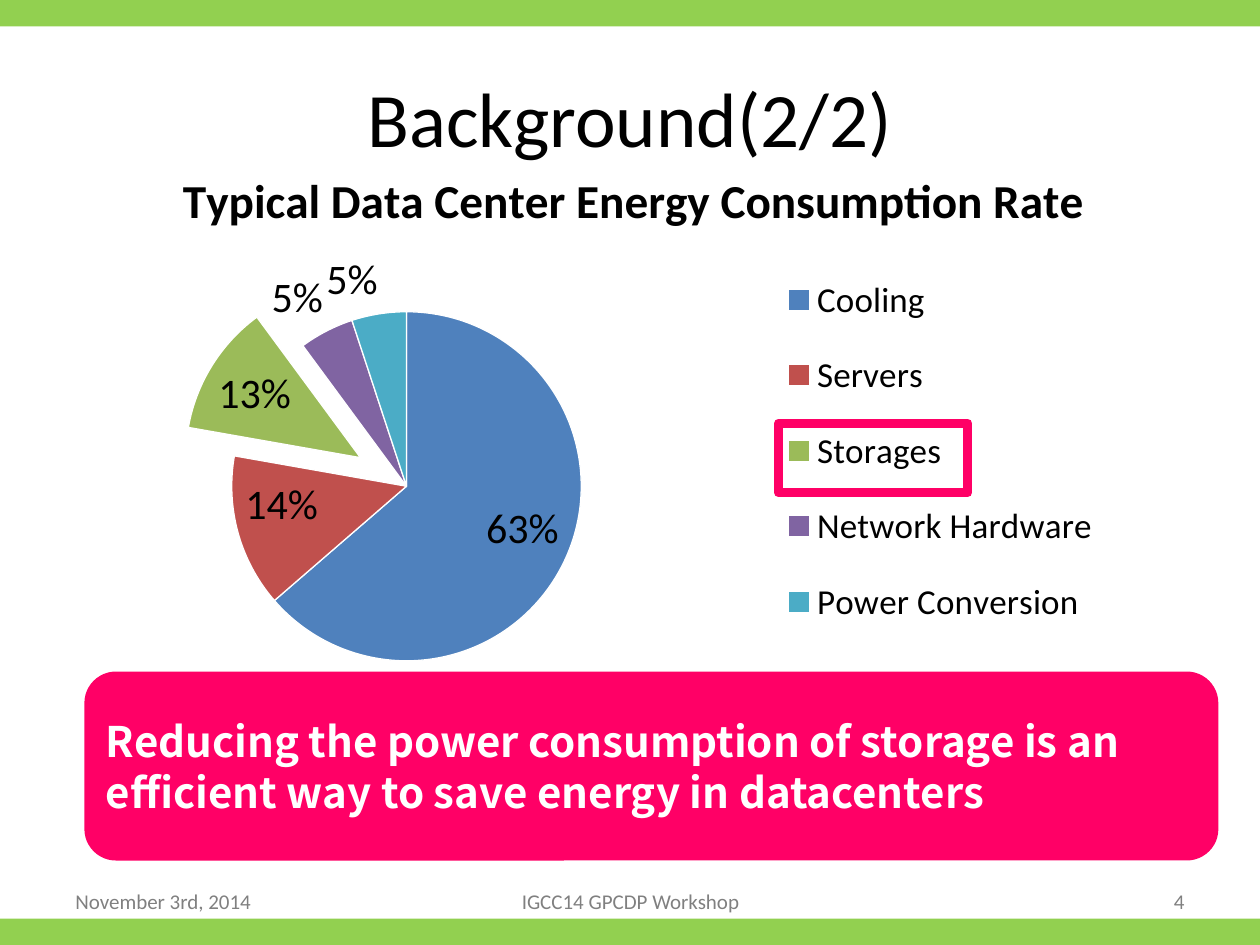
from lxml.etree import SubElement
from pptx import Presentation
from pptx.chart.data import CategoryChartData
from pptx.dml.color import RGBColor
from pptx.enum.chart import XL_CHART_TYPE, XL_LABEL_POSITION, XL_LEGEND_POSITION
from pptx.enum.shapes import MSO_SHAPE
from pptx.enum.text import MSO_ANCHOR, PP_ALIGN
from pptx.oxml import parse_xml
from pptx.oxml.ns import nsdecls, qn
from pptx.util import Inches, Pt

BLACK = RGBColor(0x00, 0x00, 0x00)
WHITE = RGBColor(0xFF, 0xFF, 0xFF)
GRAY = RGBColor(0x80, 0x80, 0x80)
GREEN = RGBColor(0x92, 0xD0, 0x50)
PINK = RGBColor(0xFF, 0x00, 0x66)

# Content
TITLE = "Background(2/2)"
CHART_TITLE = "Typical Data Center Energy Consumption Rate"
MESSAGE = ("Reducing the power consumption of storage is an "
           "efficient way to save energy in datacenters")
# Category, value, slice colour, fixed label (None: computed percentage)
SLICES = [
    ("Cooling", 63, RGBColor(0x4F, 0x81, 0xBD), "63%"),
    ("Servers", 14, RGBColor(0xC0, 0x50, 0x4D), "14%"),
    ("Storages", 12, RGBColor(0x9B, 0xBB, 0x59), "13%"),
    ("Network Hardware", 5, RGBColor(0x80, 0x64, 0xA2), None),
    ("Power Conversion", 5, RGBColor(0x4B, 0xAC, 0xC6), None),
]
EXPLODED, EXPLOSION = "Storages", 31
# Text, left, width, alignment
FOOTERS = [
    ("November 3rd, 2014", 0.5, 2.33, PP_ALIGN.LEFT),
    ("IGCC14 GPCDP Workshop", 3.42, 3.17, PP_ALIGN.CENTER),
    ("4", 7.17, 2.33, PP_ALIGN.RIGHT),
]
BAR_HEIGHT = 0.21
BAR_TOPS = (0, 7.5 - BAR_HEIGHT)


def box(left, top, width, height):
    return [Inches(length) for length in (left, top, width, height)]


def set_font(font, size, color=BLACK, bold=False, name="Calibri"):
    values = {"size": Pt(size), "bold": bold, "name": name}
    for attribute, value in values.items():
        setattr(font, attribute, value)
    font.color.rgb = color


def write(shape, text, align, **font_values):
    frame = shape.text_frame
    frame.word_wrap = True
    frame.vertical_anchor = MSO_ANCHOR.MIDDLE
    paragraph = frame.paragraphs[0]
    paragraph.alignment = align
    run = paragraph.add_run()
    run.text = text
    set_font(run.font, **font_values)


def add_shape(slide, kind, place, fill=None, line=None, line_width=0):
    shape = slide.shapes.add_shape(kind, *place)
    shape.shadow.inherit = False
    for target, color in ((shape.fill, fill), (shape.line.fill, line)):
        if color is None:
            target.background()
        else:
            target.solid()
            target.fore_color.rgb = color
    if line is not None:
        shape.line.width = Pt(line_width)
    return shape


def place_part(part, after=None, target=None, **fractions):
    """Give a chart part a manual layout in fractions of the chart."""
    for old in part.findall(qn("c:layout")):
        part.remove(old)
    layout = parse_xml(f"<c:layout {nsdecls('c')}/>")
    manual = SubElement(layout, qn("c:manualLayout"))
    settings = {"xMode": "edge", "yMode": "edge", **fractions}
    if target:
        settings = {"layoutTarget": target, **settings}
    for tag, value in settings.items():
        SubElement(manual, qn(f"c:{tag}")).set("val", str(value))
    if after:
        part.find(qn(after)).addnext(layout)
    else:
        part.insert(0, layout)


def add_pie(slide):
    data = CategoryChartData()
    data.categories = [name for name, *_ in SLICES]
    data.add_series("Series 1", [value for _, value, *_ in SLICES])
    chart = slide.shapes.add_chart(
        XL_CHART_TYPE.PIE, *box(0.28, 1.23, 9.21, 4.02), data).chart
    set_font(chart.font, 10)

    # Title, legend and plot positions
    chart.has_title = True
    run = chart.chart_title.text_frame.paragraphs[0].add_run()
    run.text = CHART_TITLE
    set_font(run.font, 27, bold=True)
    chart.has_legend = True
    legend = chart.legend
    legend.position = XL_LEGEND_POSITION.RIGHT
    legend.include_in_layout = False
    set_font(legend.font, 20)
    chart_element = chart.element.find(qn("c:chart"))
    place_part(chart_element.find(qn("c:title")), "c:tx", x=0.12, y=0.01)
    place_part(chart_element.find(qn("c:legend")), "c:legendPos",
               x=0.61, y=0.18, w=0.34, h=0.81)
    place_part(chart_element.find(qn("c:plotArea")), target="inner",
               x=0.08, y=0.31, w=0.48, h=0.69)

    # Labels and slices
    plot = chart.plots[0]
    plot.vary_by_categories = True
    series = plot.series[0]
    labels = series.data_labels
    labels.show_percentage = True
    labels.show_value = False
    labels.position = XL_LABEL_POSITION.OUTSIDE_END
    set_font(labels.font, 24)
    for index, (name, _, color, fixed_label) in enumerate(SLICES):
        point = series.points[index]
        point.format.fill.solid()
        point.format.fill.fore_color.rgb = color
        point.format.line.color.rgb = WHITE
        point.format.line.width = Pt(0.75)
        if fixed_label:
            label = point.data_label
            label_run = label.text_frame.paragraphs[0].add_run()
            label_run.text = fixed_label
            set_font(label_run.font, 24)
            label.position = XL_LABEL_POSITION.INSIDE_END
        if name == EXPLODED:
            slice_element = chart_element.findall(f".//{qn('c:dPt')}")[index]
            slice_element.find(qn("c:spPr")).addprevious(parse_xml(
                f'<c:explosion {nsdecls("c")} val="{EXPLOSION}"/>'))


def main():
    presentation = Presentation()
    presentation.slide_width, presentation.slide_height = Inches(10), Inches(7.5)
    slide = presentation.slides.add_slide(presentation.slide_layouts[5])

    # Bars, title and footers
    for top in BAR_TOPS:
        add_shape(slide, MSO_SHAPE.RECTANGLE, box(0, top, 10, BAR_HEIGHT), GREEN)
    title = slide.shapes.title
    title.left, title.top, title.width, title.height = box(0.5, 0.3, 9, 1.25)
    write(title, TITLE, PP_ALIGN.CENTER, size=44)
    for text, left, width, align in FOOTERS:
        footer = slide.shapes.add_textbox(*box(left, 6.95, width, 0.4))
        write(footer, text, align, size=12, color=GRAY)

    # Chart, legend highlight and message
    add_pie(slide)
    add_shape(slide, MSO_SHAPE.RECTANGLE, box(6.18, 3.36, 1.5, 0.55),
              line=PINK, line_width=5.5)
    message = add_shape(slide, MSO_SHAPE.ROUNDED_RECTANGLE,
                        box(0.67, 5.33, 9, 1.5), PINK)
    write(message, MESSAGE, PP_ALIGN.LEFT, size=24, color=WHITE,
          bold=True, name="Noto Sans CJK JP")

    presentation.save("out.pptx")


if __name__ == "__main__":
    main()
